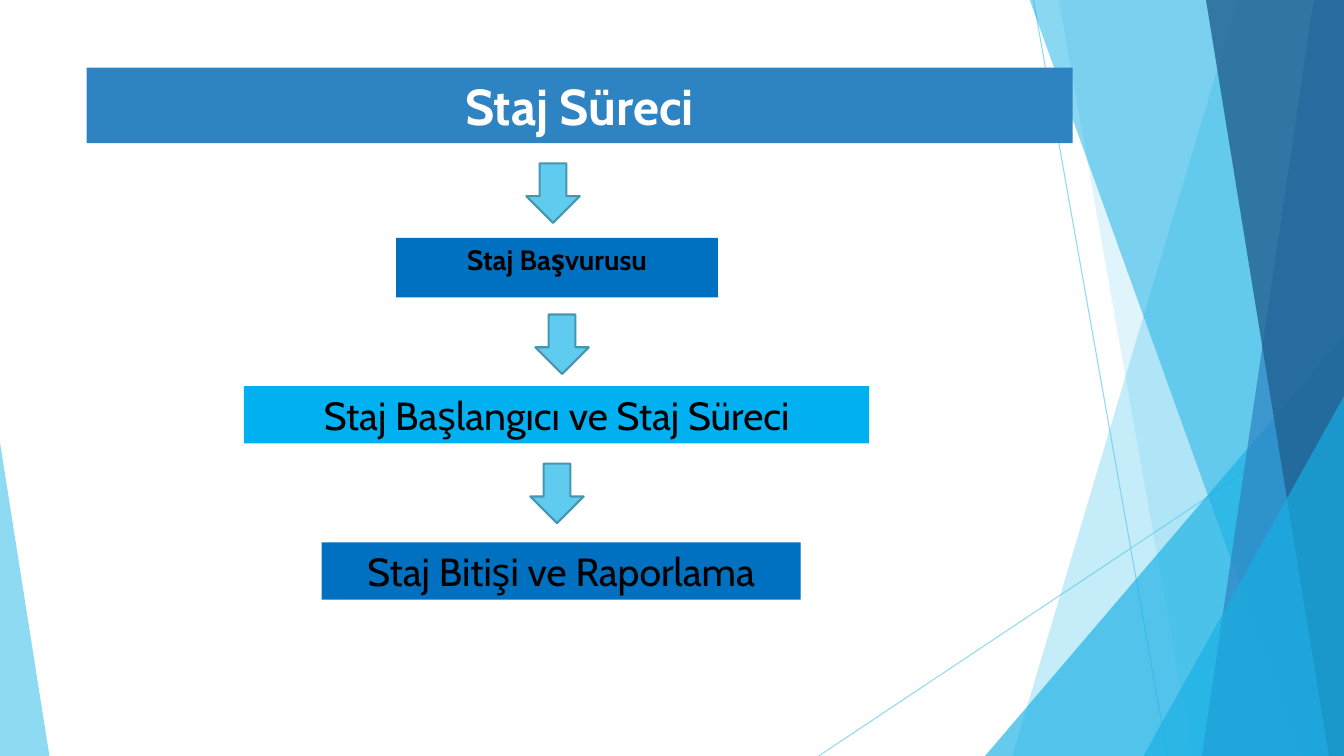
from lxml import etree
from pptx import Presentation
from pptx.dml.color import RGBColor
from pptx.enum.shapes import MSO_CONNECTOR, MSO_SHAPE
from pptx.enum.text import MSO_ANCHOR, MSO_AUTO_SIZE, PP_ALIGN
from pptx.oxml.ns import qn
from pptx.util import Pt

PX = 9144
WIDTH, HEIGHT = 1333, 750
TITLE_ONLY = 5
STRAIGHT = MSO_CONNECTOR.STRAIGHT
TRIANGLE, DOWN_ARROW = MSO_SHAPE.ISOSCELES_TRIANGLE, MSO_SHAPE.DOWN_ARROW
TOP, MIDDLE = MSO_ANCHOR.TOP, MSO_ANCHOR.MIDDLE
NO_AUTOFIT = MSO_AUTO_SIZE.NONE
CENTER = PP_ALIGN.CENTER
FONT = "Cabin"
COLORS = {
    "sky": "5FCBEF", "cyan": "17B0E4", "steel": "2E83C3", "navy": "226292",
    "blue": "0070C0", "bright": "00B0F0", "edge": "4696B1",
    "white": "FFFFFF", "black": "000000",
}
RAYS = [((1025, 0), (1158, 750)), ((1333, 403), (812, 750))]
FACETS = [
    ("band", (1228, 1004), "sky", 36),
    ("band", (1050, 1183), "sky", 20),
    ("corner", (977, 333, 356, 417, 1), "cyan", 66),
    ("band", (1021, 1291), "cyan", 50),
    ("band", (1303, 1192), "steel", 70),
    ("band", (1196, 1318), "navy", 80),
    ("corner", (1134, 393, 199, 357, 1), "cyan", 66),
    ("corner", (0, 439, 49, 311, 0), "sky", 70),
]
TITLE = ("Staj Süreci", (86, 67, 978, 75), "steel", "white",
         {"size": Pt(36), "bold": True}, MIDDLE, 0)
STEPS = [
    ("Staj Başvurusu", (393, 236, 319, 59), "blue", "black",
     {"size": Pt(20), "bold": True}, TOP, 10),
    ("Staj Başlangıcı ve Staj Süreci", (242, 383, 620, 57), "bright", "black",
     {"size": Pt(28), "bold": False}, TOP, 0),
    ("Staj Bitişi ve Raporlama", (319, 538, 475, 57), "blue", "black",
     {"size": Pt(28), "bold": False}, TOP, 0),
]
ARROWS = [(522, 162), (531, 312), (526, 460)]
ARROW_SIZE = (53, 59)


def emu(*lengths):
    """Turn px lengths into EMU."""
    return [length * PX for length in lengths]


def color(name):
    """Look up a named colour."""
    return RGBColor.from_string(COLORS[name])


def set_all(target, values):
    """Set each attribute in a dict on the target."""
    for name, value in values.items():
        setattr(target, name, value)


def paint(shape, fill):
    """Give a shape a solid fill without a shadow."""
    shape.shadow.inherit = False
    shape.fill.solid()
    shape.fill.fore_color.rgb = color(fill)


def set_opacity(shape, percent):
    """Make the coloured part of a shape translucent."""
    shade = shape.element.spPr.find(".//" + qn("a:srgbClr"))
    etree.SubElement(shade, qn("a:alpha"), val=str(percent * 1000))


def add_ray(page, start, end):
    """Draw one thin translucent line."""
    ray = page.shapes.add_connector(STRAIGHT, *emu(*start, *end))
    ray.line.color.rgb = color("sky")
    ray.line.width = Pt(0.75)
    set_opacity(ray, 70)
    etree.SubElement(ray.element.spPr, qn("a:effectLst"))


def add_band(page, top_x, bottom_x):
    """Draw a band from a slanted left edge to the right side of the page."""
    builder = page.shapes.build_freeform(top_x, -1, scale=PX)
    builder.add_line_segments(
        [(WIDTH, -1), (WIDTH, HEIGHT), (bottom_x, HEIGHT)], close=True)
    return builder.convert_to_shape()


def add_corner(page, left, top, width, height, apex):
    """Draw a right triangle with its apex at the given side."""
    corner = page.shapes.add_shape(TRIANGLE, *emu(left, top, width, height))
    corner.adjustments[0] = apex
    return corner


def add_backdrop(page):
    """Draw the rays and the translucent facets."""
    for start, end in RAYS:
        add_ray(page, start, end)
    makers = {"band": add_band, "corner": add_corner}
    for kind, geometry, fill, opacity in FACETS:
        facet = makers[kind](page, *geometry)
        paint(facet, fill)
        set_opacity(facet, opacity)
        facet.line.fill.background()


def format_bar(bar, text, box, fill, ink, font, anchor, space_before):
    """Place a filled bar and set its centred text."""
    set_all(bar, dict(zip(("left", "top", "width", "height"), emu(*box))))
    bar.fill.solid()
    bar.fill.fore_color.rgb = color(fill)
    set_all(bar.text_frame, {"word_wrap": True, "auto_size": NO_AUTOFIT,
                             "vertical_anchor": anchor})
    para = bar.text_frame.paragraphs[0]
    set_all(para, {"alignment": CENTER, "space_before": Pt(space_before)})
    span = para.add_run()
    span.text = text
    set_all(span.font, {"name": FONT, **font})
    span.font.color.rgb = color(ink)


def add_title(page):
    """Bring the title placeholder to the front and format it."""
    title = page.shapes.title
    title.element.getparent().append(title.element)
    format_bar(title, *TITLE)


def add_process(page):
    """Draw the step bars and the arrows between them."""
    for step in STEPS:
        bar = page.shapes.add_textbox(*emu(*step[1]))
        format_bar(bar, *step)
    for corner in ARROWS:
        arrow = page.shapes.add_shape(DOWN_ARROW, *emu(*corner, *ARROW_SIZE))
        paint(arrow, "sky")
        arrow.line.color.rgb = color("edge")
        arrow.line.width = Pt(1.5)


def main():
    """Build and save the deck."""
    deck = Presentation()
    deck.slide_width, deck.slide_height = emu(WIDTH, HEIGHT)
    page = deck.slides.add_slide(deck.slide_layouts[TITLE_ONLY])
    add_backdrop(page)
    add_title(page)
    add_process(page)
    deck.save("out.pptx")


if __name__ == "__main__":
    main()
